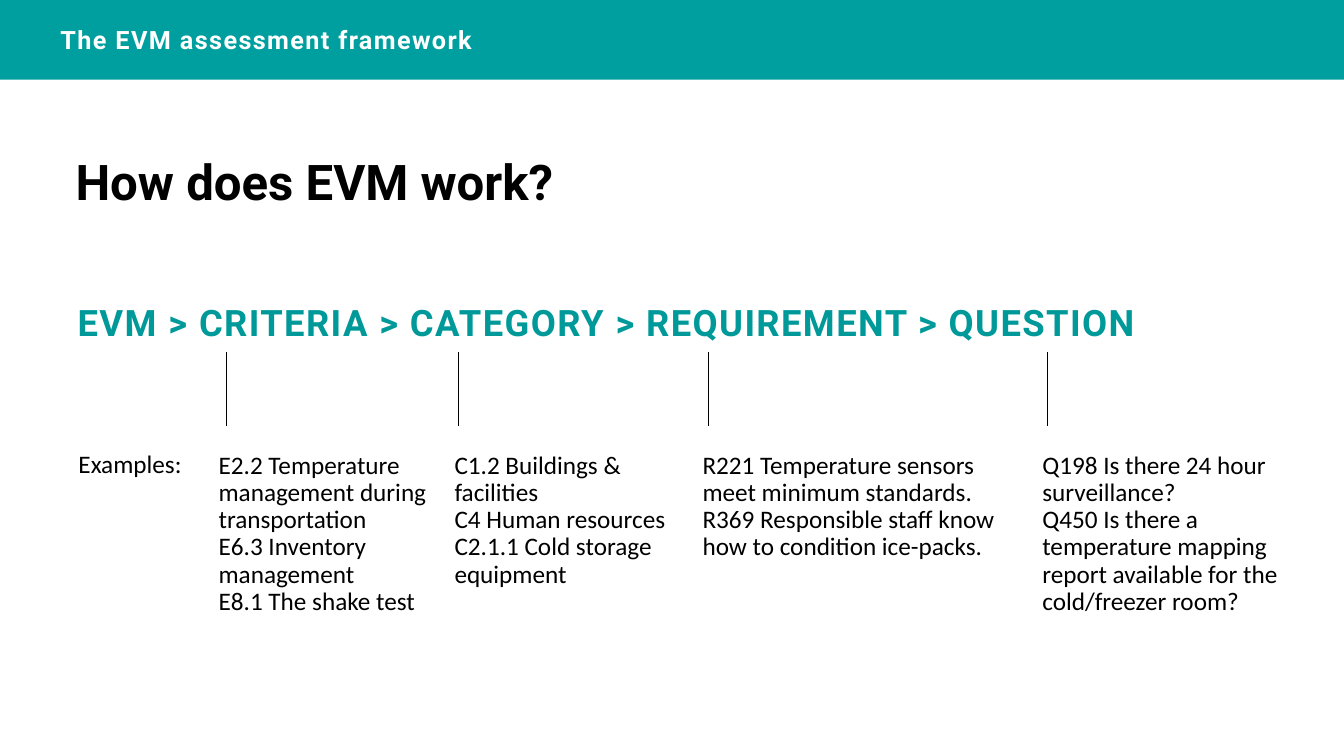
import pptx
import pptx.util
import pptx.dml.color
import pptx.enum.shapes
import pptx.enum.text
import pptx.oxml.ns
import lxml.etree

Inches = pptx.util.Inches
RGBColor = pptx.dml.color.RGBColor
Anchor = pptx.enum.text.MSO_ANCHOR

TEAL = RGBColor(0x00, 0x99, 0x99)
BAND = RGBColor(0x00, 0x9F, 0x9F)
BLACK = RGBColor(0, 0, 0)
WHITE = RGBColor(255, 255, 255)

LEVELS = [
    (2.07, 2.34, 2.5, 2.25, [
        "E2.2 Temperature management during transportation",
        "E6.3 Inventory management",
        "E8.1 The shake test"]),
    (4.41, 2.3, 2.38, 4.55, [
        "C1.2 Buildings & facilities",
        "C4 Human resources",
        "C2.1.1 Cold storage equipment"]),
    (6.87, 3.16, 1.74, 7.03, [
        "R221 Temperature sensors meet minimum standards.",
        "R369 Responsible staff know how to condition ice-packs."]),
    (10.24, 2.54, 1.96, 10.39, [
        "Q198 Is there 24 hour surveillance?",
        "Q450 Is there a temperature mapping report available for the cold/freezer room?"]),
]


def write(shape, lines, size=18, font="Calibri", color=BLACK, bold=False,
          track=0, space=1.0, anchor=Anchor.TOP, inset=(0.1, 0.05, 0.1, 0.05)):
    frame = shape.text_frame
    frame.word_wrap = True
    frame.auto_size = pptx.enum.text.MSO_AUTO_SIZE.NONE
    frame.vertical_anchor = anchor
    (frame.margin_left, frame.margin_top,
     frame.margin_right, frame.margin_bottom) = map(Inches, inset)
    for i, line in enumerate(lines):
        para = frame.paragraphs[0] if i == 0 else frame.add_paragraph()
        para.alignment = pptx.enum.text.PP_ALIGN.LEFT
        para.line_spacing = space
        run = para.add_run()
        run.text = line
        run.font.size = pptx.util.Pt(size)
        run.font.name = font
        run.font.bold = bold
        run.font.color.rgb = color
        if track:
            run._r.get_or_add_rPr().set("spc", str(track * 100))


def add_text(slide, box, lines, **style):
    shape = slide.shapes.add_textbox(*map(Inches, box))
    write(shape, lines, **style)


def add_chain(slide, box):
    title = slide.shapes.title
    title.left, title.top, title.width, title.height = map(Inches, box)
    write(title, ["EVM > CRITERIA > CATEGORY > REQUIREMENT > QUESTION"],
          size=26, font="Roboto", color=TEAL, bold=True, track=1,
          anchor=Anchor.MIDDLE, inset=(0, 0, 0, 0))


def add_level(slide, box, stem, lines):
    left, top, width, height = box
    line = slide.shapes.add_connector(
        pptx.enum.shapes.MSO_CONNECTOR.STRAIGHT,
        Inches(stem), Inches(top - 0.95), Inches(stem), Inches(top - 0.21))
    line.line.color.rgb = BLACK
    line.line.width = pptx.util.Pt(0.75)
    lxml.etree.SubElement(line._element.spPr, pptx.oxml.ns.qn("a:effectLst"))
    add_text(slide, box, lines, space=0.9)


def add_band(slide, box):
    band = slide.shapes.add_shape(
        pptx.enum.shapes.MSO_SHAPE.RECTANGLE, *map(Inches, box))
    band.shadow.inherit = False
    band.fill.solid()
    band.fill.fore_color.rgb = BAND
    band.line.fill.background()
    write(band, ["The EVM assessment framework"], font="Roboto", color=WHITE,
          bold=True, track=1, anchor=Anchor.MIDDLE, inset=(0.6, 0.05, 0.1, 0.05))


def main():
    deck = pptx.Presentation()
    deck.slide_width = Inches(13.33)
    deck.slide_height = Inches(7.5)
    slide = deck.slides.add_slide(deck.slide_layouts.get_by_name("Title Only"))
    add_chain(slide, (0.77, 2.64, 11.9, 1.11))
    for left, width, height, stem, lines in LEVELS:
        add_level(slide, (left, 4.44, width, height), stem, lines)
    add_band(slide, (0, 0, 13.33, 0.79))
    add_text(slide, (0.75, 1.34, 11.74, 0.9), ["How does EVM work?"],
             size=35.1, font="Roboto", bold=True,
             anchor=Anchor.MIDDLE, inset=(0, 0, 0, 0))
    add_text(slide, (0.68, 4.43, 1.39, 0.7), ["Examples:"], space=0.9)
    deck.save("out.pptx")


if __name__ == "__main__":
    main()
